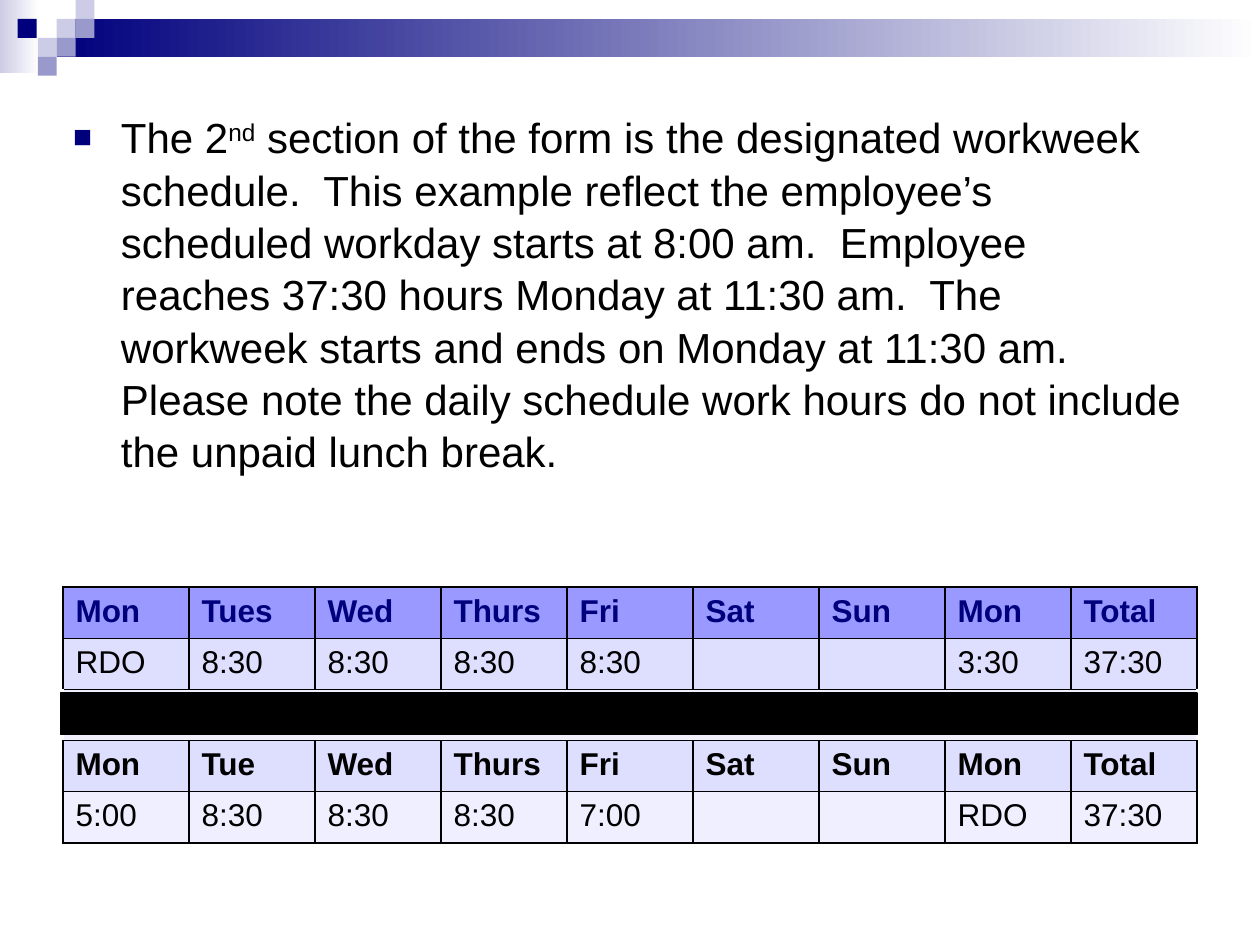
from lxml import etree
from pptx import Presentation
from pptx.dml.color import RGBColor
from pptx.enum.shapes import MSO_SHAPE
from pptx.enum.text import MSO_ANCHOR, MSO_AUTO_SIZE, PP_ALIGN
from pptx.oxml.ns import qn
from pptx.util import Inches, Pt

RECTANGLE = MSO_SHAPE.RECTANGLE
TOP = MSO_ANCHOR.TOP
LEFT = PP_ALIGN.LEFT
NO_AUTOFIT = MSO_AUTO_SIZE.NONE

BLACK = RGBColor(0x00, 0x00, 0x00)
WHITE = RGBColor(0xFF, 0xFF, 0xFF)
NAVY = RGBColor(0x00, 0x00, 0x7D)
SLATE = RGBColor(0x99, 0x99, 0xCC)
MIST = RGBColor(0xCC, 0xCC, 0xE6)
PERIWINKLE = RGBColor(0x99, 0x99, 0xFF)
LAVENDER = RGBColor(0xDE, 0xDE, 0xFF)
PALE = RGBColor(0xEF, 0xEF, 0xFF)

FONT = "Arial"
TILE = 0.15
# Left, top and colour of each tile in the corner mosaic
TILES = [
    (0.45, 0.15, MIST), (0.6, 0, MIST), (0.6, 0.15, SLATE), (0.3, 0.3, MIST),
    (0.14, 0.15, NAVY), (0.45, 0.3, SLATE), (0.3, 0.45, SLATE),
]

EXPLANATION = [
    ("The 2", False),
    ("nd", True),
    (" section of the form is the designated workweek schedule.  This example "
     "reflect the employee’s scheduled workday starts at 8:00 am.  Employee "
     "reaches 37:30 hours Monday at 11:30 am.  The workweek starts and ends on "
     "Monday at 11:30 am.  Please note the daily schedule work hours do not "
     "include the unpaid lunch break.", False),
]

# Cell texts, fill, text colour and weight of each row
SCHEDULE = [
    ("Mon Tues Wed Thurs Fri Sat Sun Mon Total".split(), PERIWINKLE, NAVY, True),
    (["RDO"] + ["8:30"] * 4 + ["", "", "3:30", "37:30"], LAVENDER, BLACK, False),
    ([""] * 9, PALE, BLACK, False),
    ("Mon Tue Wed Thurs Fri Sat Sun Mon Total".split(), LAVENDER, BLACK, True),
    (["5:00"] + ["8:30"] * 3 + ["7:00", "", "", "RDO", "37:30"], PALE, BLACK, False),
]
SEPARATOR_ROW = 2


def set_font(font, **values):
    for name, value in {"name": FONT, **values}.items():
        if name == "color":
            font.color.rgb = value
        else:
            setattr(font, name, value)


def add_rectangle(slide, box, color, fade_to=None, outlined=False):
    rectangle = slide.shapes.add_shape(RECTANGLE, *map(Inches, box))
    rectangle.shadow.inherit = False
    if fade_to is None:
        rectangle.fill.solid()
        rectangle.fill.fore_color.rgb = color
    else:
        rectangle.fill.gradient()
        rectangle.fill.gradient_angle = 0
        for stop, stop_color in zip(rectangle.fill.gradient_stops, (color, fade_to)):
            stop.color.rgb = stop_color
    if outlined:
        rectangle.line.color.rgb = color
        rectangle.line.width = Pt(0.75)
    else:
        rectangle.line.fill.background()


def add_header(slide, left, top, width):
    add_rectangle(slide, (left, top, 0.31, 0.58), MIST, WHITE)
    add_rectangle(slide, (left + 0.45, top + TILE, width - 0.45, 2 * TILE), NAVY, WHITE)
    for tile_left, tile_top, color in TILES:
        add_rectangle(slide, (left + tile_left, top + tile_top, TILE, TILE), color)


def set_square_bullet(paragraph, indent):
    properties = paragraph._p.get_or_add_pPr()
    properties.set("marL", str(indent))
    properties.set("indent", str(-indent))
    color = etree.SubElement(properties, qn("a:buClr"))
    etree.SubElement(color, qn("a:srgbClr"), val=str(NAVY))
    etree.SubElement(properties, qn("a:buSzPct"), val="75000")
    etree.SubElement(properties, qn("a:buFont"), typeface=FONT)
    etree.SubElement(properties, qn("a:buChar"), char="■")


def fill_explanation(body, left, top, width, height):
    body.left, body.top = Inches(left), Inches(top)
    body.width, body.height = Inches(width), Inches(height)
    frame = body.text_frame
    frame.word_wrap = True
    frame.auto_size = NO_AUTOFIT
    frame.vertical_anchor = TOP
    paragraph = frame.paragraphs[0]
    paragraph.alignment = LEFT
    paragraph.line_spacing = 1.04
    set_square_bullet(paragraph, Inches(0.38))
    for text, raised in EXPLANATION:
        run = paragraph.add_run()
        run.text = text
        set_font(run.font, size=Pt(24), color=BLACK)
        if raised:
            run.font._element.set("baseline", "30000")


def set_borders(cell, side_color):
    """Draw the four cell borders; they must precede the fill in the XML."""
    properties = cell._tc.get_or_add_tcPr()
    sides = {"L": side_color, "R": side_color, "T": BLACK, "B": BLACK}
    for side, color in sides.items():
        line = etree.SubElement(properties, qn(f"a:ln{side}"), w=str(Pt(1)))
        fill = etree.SubElement(line, qn("a:solidFill"))
        etree.SubElement(fill, qn("a:srgbClr"), val=str(color))


def add_schedule(slide, left, top, width, height):
    row_count, column_count = len(SCHEDULE), len(SCHEDULE[0][0])
    box = map(Inches, (left, top, width, height))
    table = slide.shapes.add_table(row_count, column_count, *box).table
    for row, (texts, fill, color, bold) in enumerate(SCHEDULE):
        for column, text in enumerate(texts):
            cell = table.cell(row, column)
            set_borders(cell, WHITE if row == SEPARATOR_ROW else BLACK)
            cell.fill.solid()
            cell.fill.fore_color.rgb = fill
            cell.text = text
            set_font(cell.text_frame.paragraphs[0].font, size=Pt(18))
            for run in cell.text_frame.paragraphs[0].runs:
                set_font(run.font, size=Pt(18), color=color, bold=bold)
    table.cell(SEPARATOR_ROW, 0).merge(table.cell(SEPARATOR_ROW, column_count - 1))


def main():
    presentation = Presentation()
    presentation.slide_width, presentation.slide_height = Inches(10), Inches(7.5)
    slide = presentation.slides.add_slide(presentation.slide_layouts[1])
    title = slide.shapes.title._element
    title.getparent().remove(title)
    add_header(slide, 0, 0, 10)
    fill_explanation(slide.placeholders[1], 0.48, 0.82, 9, 2.83)
    add_schedule(slide, 0.5, 4.66, 9, 2.03)
    add_rectangle(slide, (0.48, 5.5, 9.02, 0.33), BLACK, outlined=True)
    presentation.save("out.pptx")


if __name__ == "__main__":
    main()
